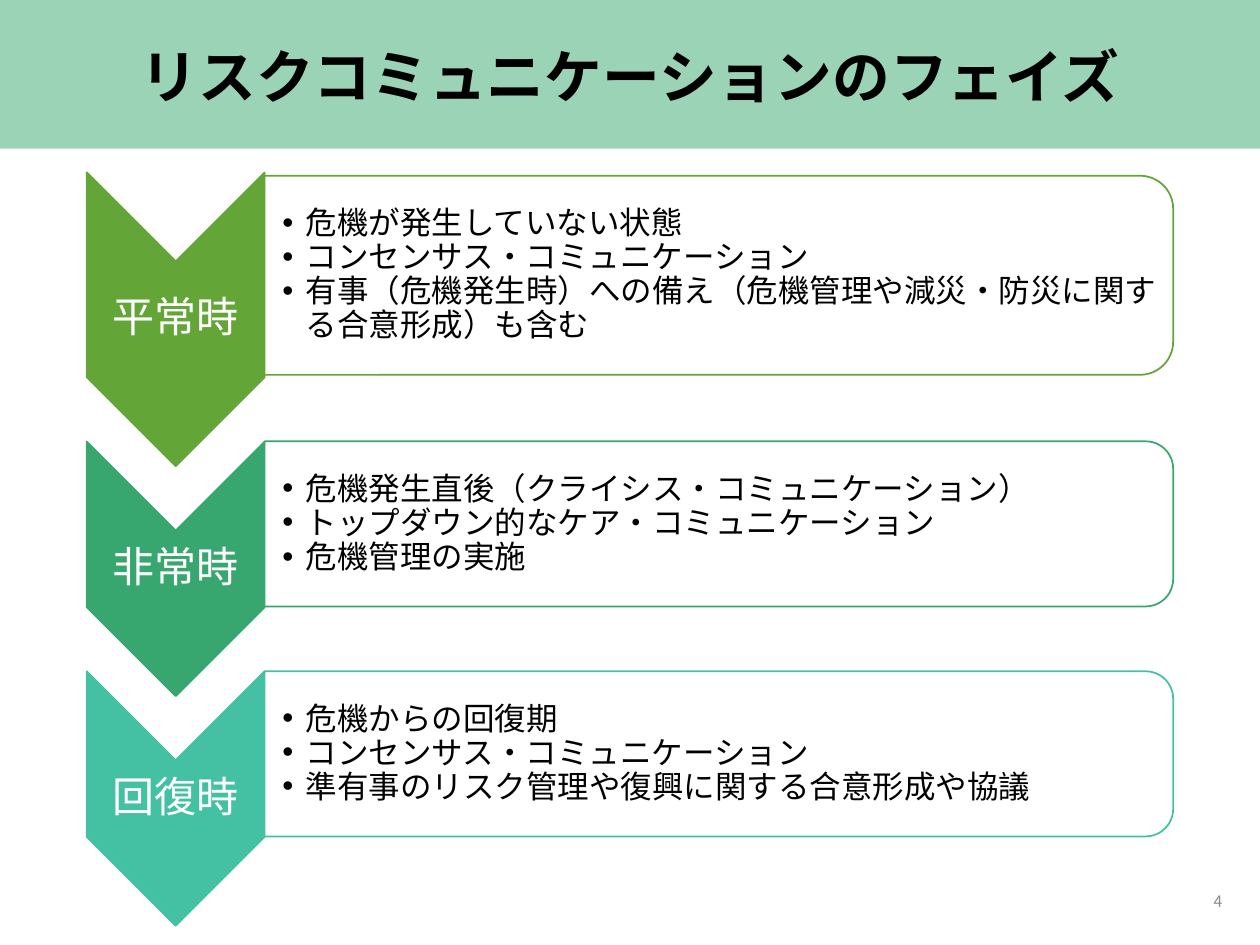
from dataclasses import dataclass

from lxml.etree import SubElement
from pptx import Presentation
from pptx.dml.color import RGBColor
from pptx.enum.shapes import MSO_SHAPE as Preset
from pptx.enum.text import MSO_ANCHOR as Anchor, MSO_AUTO_SIZE as AutoSize, PP_ALIGN as Align
from pptx.oxml.ns import qn
from pptx.shapes.autoshape import Shape
from pptx.slide import Slide
from pptx.util import Pt

FONT = "Noto Sans CJK JP"
CHEVRON_LEFT, CHEVRON_WIDTH = 49.6, 101.6
PANEL_LEFT, PANEL_WIDTH = 151.2, 519.2
LIST_WIDTH = 513.4
BULLET_INDENT = 13.5


@dataclass(frozen=True)
class Box:
    left: float
    top: float
    width: float
    height: float


@dataclass(frozen=True)
class Phase:
    name: str
    color: str
    chevron_top: float
    chevron_height: float
    panel_top: float
    panel_height: float
    points: tuple[str, ...]


PHASES = (
    Phase("平常時", "63A537", 98.6, 167.8, 100.4, 113.8, (
        "危機が発生していない状態",
        "コンセンサス・コミュニケーション",
        "有事（危機発生時）への備え（危機管理や減災・防災に関する合意形成）も含む",
    )),
    Phase("非常時", "37A76F", 252.4, 145.4, 252.2, 94.4, (
        "危機発生直後（クライシス・コミュニケーション）",
        "トップダウン的なケア・コミュニケーション",
        "危機管理の実施",
    )),
    Phase("回復時", "44C1A3", 383.6, 145.4, 383.6, 94.4, (
        "危機からの回復期",
        "コンセンサス・コミュニケーション",
        "準有事のリスク管理や復興に関する合意形成や協議",
    )),
)


def rgb(color: str) -> RGBColor:
    return RGBColor.from_string(color)


def place(shape: Shape, box: Box) -> None:
    shape.left, shape.top = Pt(box.left), Pt(box.top)
    shape.width, shape.height = Pt(box.width), Pt(box.height)


def draw_shape(slide: Slide, preset: Preset, box: Box, fill: str, line: str | None = None) -> Shape:
    shape = slide.shapes.add_shape(
        preset, Pt(box.left), Pt(box.top), Pt(box.width), Pt(box.height))
    shape.shadow.inherit = False
    shape.fill.solid()
    shape.fill.fore_color.rgb = rgb(fill)
    if line:
        shape.line.color.rgb = rgb(line)
        shape.line.width = Pt(1)
    else:
        shape.line.fill.background()
    return shape


def draw_turned(slide: Slide, preset: Preset, box: Box, fill: str, line: str) -> None:
    shift = (box.width - box.height) / 2
    unturned = Box(box.left + shift, box.top - shift, box.height, box.width)
    draw_shape(slide, preset, unturned, fill, line).rotation = 90


def write(shape: Shape, lines: tuple[str, ...], size: float, color: str, align: Align,
          spacing: float = 0.9, bold: bool = False, bulleted: bool = False) -> None:
    frame = shape.text_frame
    frame.word_wrap = True
    frame.auto_size = AutoSize.NONE
    frame.vertical_anchor = Anchor.MIDDLE
    frame.text = "\n".join(lines)
    for paragraph in frame.paragraphs:
        paragraph.alignment = align
        paragraph.line_spacing = spacing
        paragraph.space_before = paragraph.space_after = Pt(0)
        font = paragraph.font
        font.size, font.bold, font.name = Pt(size), bold, FONT
        font.color.rgb = rgb(color)
        properties = paragraph._p.get_or_add_pPr()
        defaults = properties.find(qn("a:defRPr"))
        SubElement(defaults, qn("a:ea"), typeface=FONT)
        if bulleted:
            properties.set("marL", str(Pt(BULLET_INDENT)))
            properties.set("indent", str(-Pt(BULLET_INDENT)))
            bullet_font = SubElement(properties, qn("a:buFont"), typeface="Arial")
            bullet = SubElement(properties, qn("a:buChar"), char="•")
            defaults.addprevious(bullet_font)
            defaults.addprevious(bullet)


def set_insets(shape: Shape, left: float, others: float) -> None:
    frame = shape.text_frame
    frame.margin_left = Pt(left)
    frame.margin_top = frame.margin_right = frame.margin_bottom = Pt(others)


def add_label(slide: Slide, box: Box) -> Shape:
    return slide.shapes.add_textbox(
        Pt(box.left), Pt(box.top), Pt(box.width), Pt(box.height))


def draw_phase(slide: Slide, phase: Phase, points: Shape) -> None:
    chevron = Box(CHEVRON_LEFT, phase.chevron_top, CHEVRON_WIDTH, phase.chevron_height)
    panel = Box(PANEL_LEFT, phase.panel_top, PANEL_WIDTH, phase.panel_height)
    draw_turned(slide, Preset.CHEVRON, chevron, phase.color, phase.color)
    draw_turned(slide, Preset.ROUND_2_SAME_RECTANGLE, panel, "FFFFFF", phase.color)

    name = add_label(slide, chevron)
    set_insets(name, 1.2, 1.2)
    write(name, (phase.name,), 24, "FFFFFF", Align.CENTER)

    place(points, Box(PANEL_LEFT, phase.panel_top, LIST_WIDTH, phase.panel_height))
    set_insets(points, 10.1, 0.9)
    write(points, phase.points, 18, "000000", Align.LEFT, bulleted=True)
    bring_to_front(slide, points)


def bring_to_front(slide: Slide, shape: Shape) -> None:
    slide.shapes._spTree.append(shape._element)


def main() -> None:
    deck = Presentation()
    deck.slide_width, deck.slide_height = Pt(720), Pt(540)
    slide = deck.slides.add_slide(deck.slide_layouts.get_by_name("Comparison"))
    title, *bodies = slide.placeholders

    draw_shape(slide, Preset.RECTANGLE, Box(0, 0, 720, 85), "9BD3B7")
    place(title, Box(49.6, 15.1, 620.8, 61.2))
    write(title, ("リスクコミュニケーションのフェイズ",), 33, "000000", Align.CENTER, bold=True)
    bring_to_front(slide, title)

    for phase, points in zip(PHASES, bodies):
        draw_phase(slide, phase, points)
    for unused in bodies[len(PHASES):]:
        unused._element.getparent().remove(unused._element)

    page_number = add_label(slide, Box(543.6, 500.4, 162, 28.8))
    write(page_number, ("4",), 9, "8C8C8C", Align.RIGHT, spacing=1.0)
    deck.save("out.pptx")


if __name__ == "__main__":
    main()
